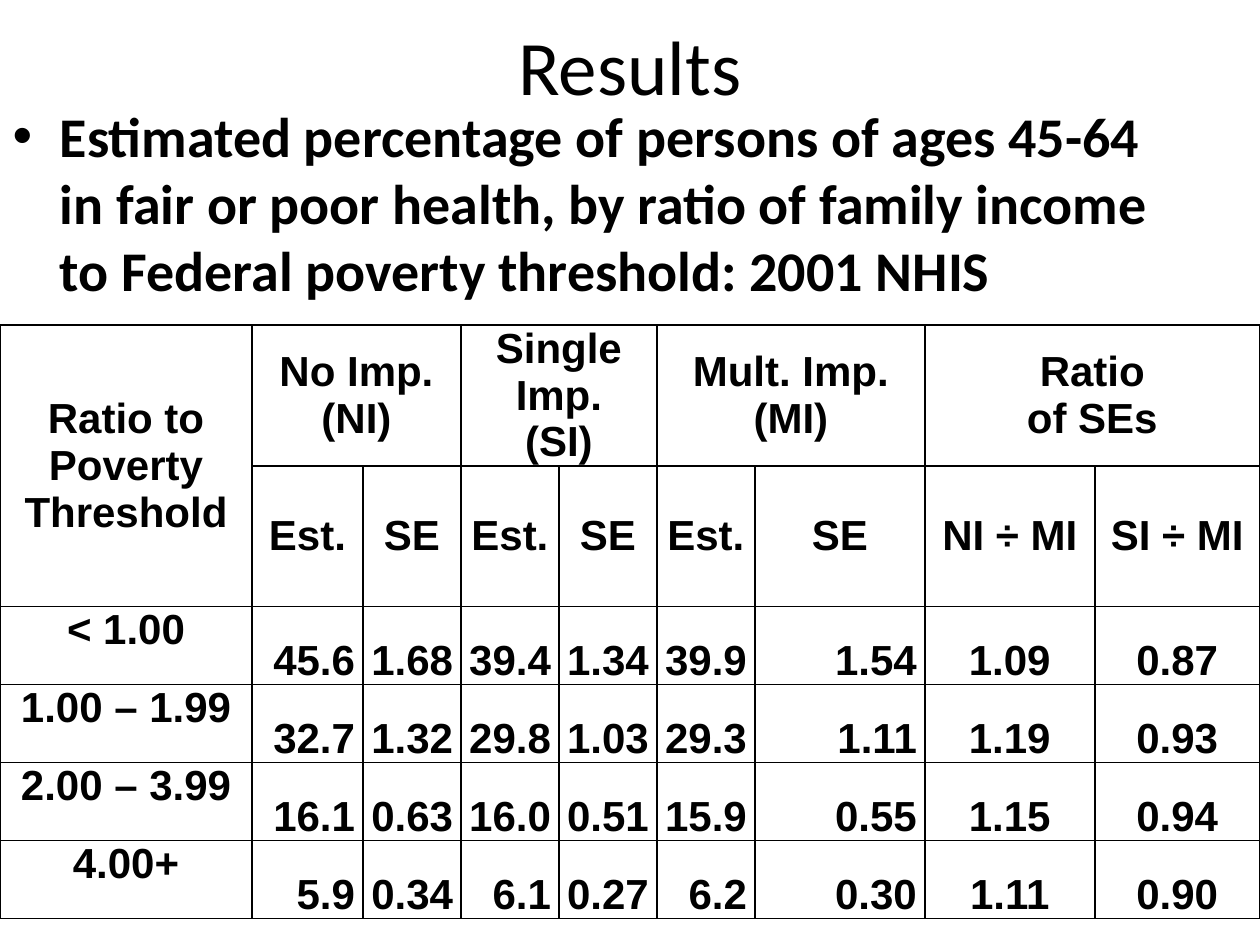
import pptx
import pptx.util
import pptx.dml.color
import pptx.enum.text
import lxml.etree

SCALE = 914400 / 126
ALIGN = pptx.enum.text.PP_ALIGN
ANCHOR = pptx.enum.text.MSO_ANCHOR
BLACK = "000000"

COLS = [252, 111, 98, 98, 98, 98, 170, 170, 165]
ROWS = [141, 140, 78, 78, 78, 78]
RIGHT = {1, 2, 3, 5, 6}
GROUPS = ["No Imp.\n(NI)", "Single Imp.\n(SI)", "Mult. Imp.\n(MI)", "Ratio\nof SEs"]
HEADS = ["Est.", "SE"] * 3 + ["NI ÷ MI", "SI ÷ MI"]
DATA = [
    ["< 1.00", "45.6", "1.68", "39.4", "1.34", "39.9", "1.54", "1.09", "0.87"],
    ["1.00 – 1.99", "32.7", "1.32", "29.8", "1.03", "29.3", "1.11", "1.19", "0.93"],
    ["2.00 – 3.99", "16.1", "0.63", "16.0", "0.51", "15.9", "0.55", "1.15", "0.94"],
    ["4.00+", "5.9", "0.34", "6.1", "0.27", "6.2", "0.30", "1.11", "0.90"],
]


def px(n):
    return pptx.util.Emu(round(n * SCALE))


def color(code):
    return pptx.dml.color.RGBColor.from_string(code)


def style(para, face, size, bold, align):
    para.alignment = align
    font = para.font
    font.name, font.size, font.bold = face, pptx.util.Pt(size), bold
    font.color.rgb = color(BLACK)


def fill_holder(shape, box, text, size, bold, align):
    """Move a placeholder to box and set its one paragraph."""
    shape.left, shape.top, shape.width, shape.height = map(px, box)
    shape.text_frame.text = text
    style(shape.text_frame.paragraphs[0], "Calibri", size, bold, align)


def add_border(cell):
    """Draw a thin line on all four sides; lines must come before the fill."""
    space = "http://schemas.openxmlformats.org/drawingml/2006/main"
    props = cell._tc.get_or_add_tcPr()
    for i, side in enumerate("LRTB"):
        line = lxml.etree.Element(f"{{{space}}}ln{side}", w=str(pptx.util.Pt(1)))
        solid = lxml.etree.SubElement(line, f"{{{space}}}solidFill")
        lxml.etree.SubElement(solid, f"{{{space}}}srgbClr", val=BLACK)
        props.insert(i, line)


def set_cell(cell, text, align, anchor):
    cell.text = text
    cell.vertical_anchor = anchor
    for para in cell.text_frame.paragraphs:
        style(para, "Arial", 24, True, align)


def add_grid(slide):
    """Add the empty table with its sizes, margins and borders."""
    frame = slide.shapes.add_table(
        len(ROWS), len(COLS), 0, px(325), px(sum(COLS)), px(sum(ROWS)))
    table = frame.table
    table.first_row = table.horz_banding = False
    for col, width in zip(table.columns, COLS):
        col.width = px(width)
    for row, height in zip(table.rows, ROWS):
        row.height = px(height)
    for cell in table.iter_cells():
        cell.fill.background()
        cell.margin_left = cell.margin_right = px(8)
        cell.margin_top = cell.margin_bottom = 0
        add_border(cell)
    return table


def fill_heads(table):
    mid = (ALIGN.CENTER, ANCHOR.MIDDLE)
    table.cell(0, 0).merge(table.cell(1, 0))
    set_cell(table.cell(0, 0), "Ratio to Poverty\nThreshold", *mid)
    for i, text in enumerate(GROUPS):
        col = 1 + 2 * i
        table.cell(0, col).merge(table.cell(0, col + 1))
        set_cell(table.cell(0, col), text, *mid)
    for col, text in enumerate(HEADS, 1):
        set_cell(table.cell(1, col), text, *mid)


def fill_data(table):
    for r, row in enumerate(DATA, 2):
        for c, text in enumerate(row):
            align = ALIGN.RIGHT if c in RIGHT else ALIGN.CENTER
            anchor = ANCHOR.BOTTOM if c else ANCHOR.TOP
            set_cell(table.cell(r, c), text, align, anchor)


def main():
    deck = pptx.Presentation()
    deck.slide_width, deck.slide_height = px(1260), px(945)
    slide = deck.slides.add_slide(deck.slide_layouts[1])
    title, body = slide.placeholders
    fill_holder(title, (63, 10, 1134, 110), "Results", 44, False, ALIGN.CENTER)
    fill_holder(
        body, (0, 95, 1207, 809),
        "Estimated percentage of persons of ages 45-64 in fair or poor health, "
        "by ratio of family income to Federal poverty threshold: 2001 NHIS",
        32, True, ALIGN.LEFT)
    table = add_grid(slide)
    fill_heads(table)
    fill_data(table)
    deck.save("out.pptx")


if __name__ == "__main__":
    main()
